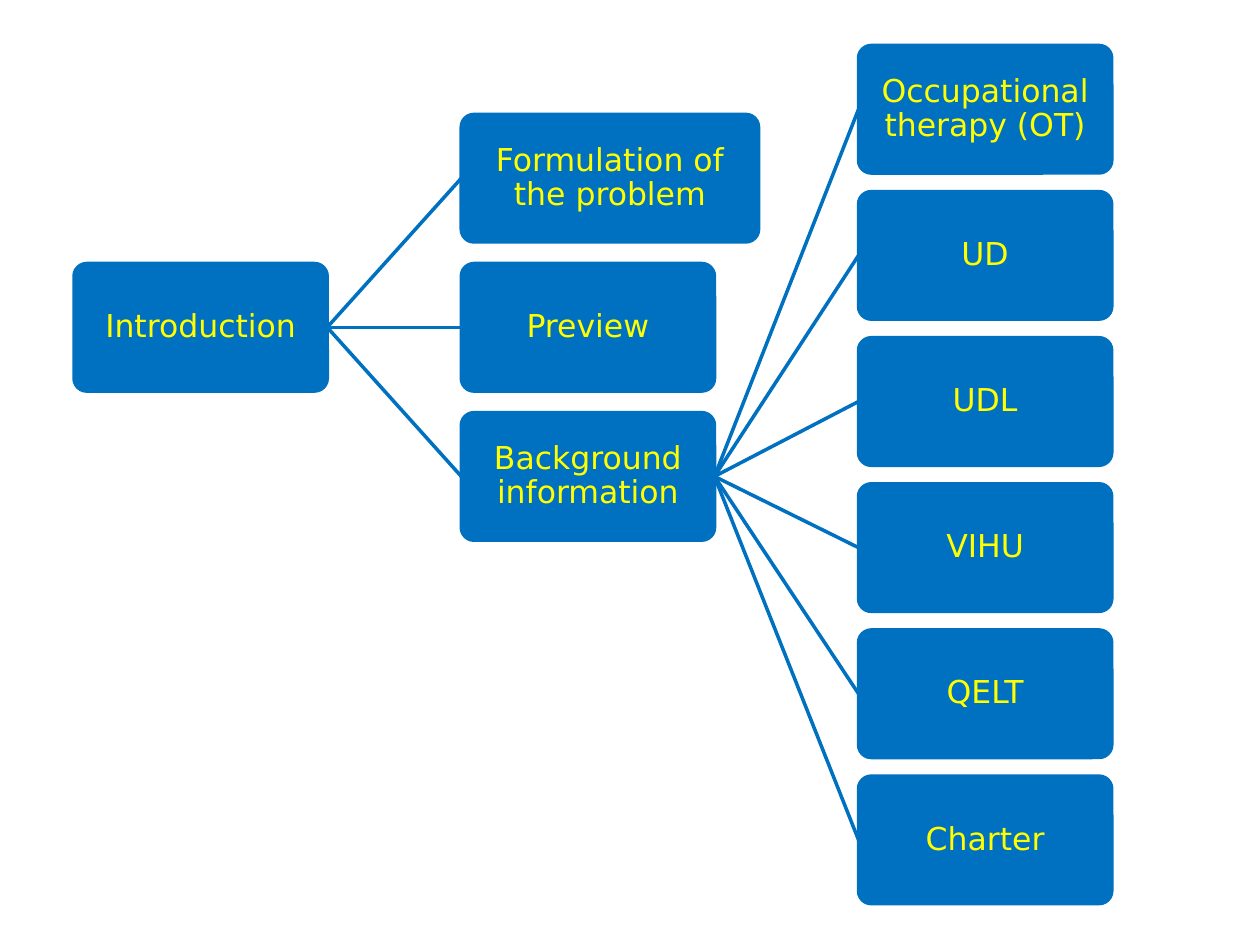
"""Build a slide with a left-to-right tree of introduction topics."""
from lxml import etree
from pptx import Presentation
from pptx.dml.color import RGBColor
from pptx.enum.shapes import MSO_CONNECTOR, MSO_SHAPE
from pptx.enum.text import MSO_ANCHOR, PP_ALIGN
from pptx.oxml.ns import qn
from pptx.util import Pt

ROUNDED = MSO_SHAPE.ROUNDED_RECTANGLE
STRAIGHT = MSO_CONNECTOR.STRAIGHT
MIDDLE = MSO_ANCHOR.MIDDLE
CENTER = PP_ALIGN.CENTER
COLORS = {"box": "0070C0", "text": "FFFF00"}
LEFT_SITE, RIGHT_SITE = 1, 3
BOX_W, WIDE_W, BOX_H = 144.7, 169.9, 72.9
BLANK_LAYOUT = 6

SECTIONS = ["Formulation of the problem", "Preview", "Background information"]
TOPICS = ["Occupational therapy (OT)", "UD", "UDL", "VIHU", "QELT", "Charter"]


def rgb(name):
    return RGBColor.from_string(COLORS[name])


def write(tf, text, size=18, font="DejaVu Sans", color="text", align=CENTER, spacing=0.9):
    p = tf.paragraphs[0]
    p.alignment = align
    p.line_spacing = spacing
    r = p.add_run()
    r.text = text
    r.font.size = Pt(size)
    r.font.name = font
    r.font.color.rgb = rgb(color)


class Tree:
    def __init__(self, slide, color="box", line_width=2, inset=0.7):
        self.slide = slide
        self.color = color
        self.line_width = line_width
        self.inset = inset

    def outline(self, line):
        line.color.rgb = rgb(self.color)
        line.width = Pt(self.line_width)

    def box(self, text, x, y, w=BOX_W):
        s = self.slide.shapes.add_shape(ROUNDED, Pt(x), Pt(y), Pt(w), Pt(BOX_H))
        s.adjustments[0] = 0.1
        s.shadow.inherit = False
        s.fill.solid()
        s.fill.fore_color.rgb = rgb(self.color)
        self.outline(s.line)
        tf = s.text_frame
        tf.word_wrap = True
        tf.vertical_anchor = MIDDLE
        tf.margin_left = tf.margin_right = Pt(self.inset)
        tf.margin_top = tf.margin_bottom = Pt(self.inset)
        write(tf, text)
        return s

    def link(self, parent, child):
        c = self.slide.shapes.add_connector(STRAIGHT, 0, 0, 0, 0)
        c.begin_connect(parent, RIGHT_SITE)
        c.end_connect(child, LEFT_SITE)
        self.outline(c.line)
        etree.SubElement(c._element.spPr, qn("a:effectLst"))

    def branch(self, parent, labels, x, top, pitch, wide=()):
        boxes = []
        for i, label in enumerate(labels):
            w = WIDE_W if label in wide else BOX_W
            child = self.box(label, x, top + i * pitch, w)
            self.link(parent, child)
            boxes.append(child)
        return boxes


def main():
    prs = Presentation()
    prs.slide_width, prs.slide_height = Pt(720), Pt(540)
    tree = Tree(prs.slides.add_slide(prs.slide_layouts[BLANK_LAYOUT]))
    root = tree.box("Introduction", 42.3, 150.6)
    sections = tree.branch(root, SECTIONS, 263.6, 65.4, 85.2, wide=SECTIONS[:1])
    tree.branch(sections[-1], TOPICS, 490.6, 26, 83.5)
    prs.save("out.pptx")


if __name__ == "__main__":
    main()
